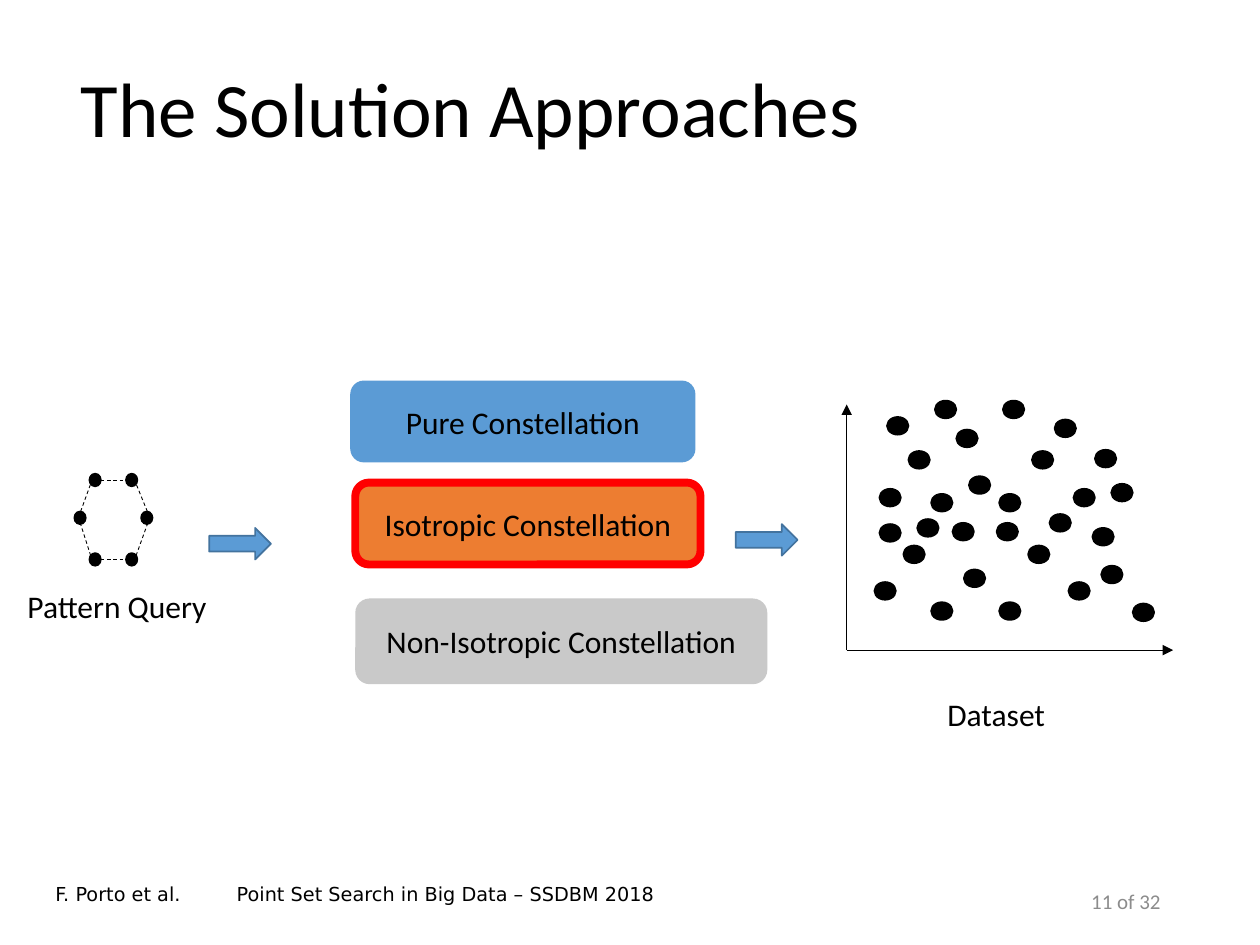
from lxml import etree
from pptx import Presentation
from pptx import util as u
from pptx.dml.color import RGBColor
from pptx.enum import dml, shapes, text
from pptx.oxml.ns import qn

COLORS = {
    "black": "000000",
    "gray text": "8C8C8C",
    "blue": "5B9BD5",
    "dark blue": "43739E",
    "orange": "ED7D31",
    "red": "FF0000",
    "silver": "C9C9C9",
}
DATASET_DOT = (0.17, 0.14)
PATTERN_DOT = (0.09, 0.1)
DATASET_POINTS = [
    (7.42, 3.18), (7.21, 3.58), (7.28, 4.12), (8.19, 3.58), (7.96, 3.18),
    (7.91, 4.15), (7.59, 3.41), (7.04, 3.31), (6.98, 3.88), (7.69, 3.78),
    (8.52, 3.88), (8.37, 3.33), (8.69, 3.57), (7.39, 3.92), (7.17, 4.33),
    (7.39, 4.78), (8.16, 4.33), (7.93, 3.92), (7.93, 4.78), (7.56, 4.15),
    (6.98, 4.16), (6.94, 4.62), (7.65, 4.52), (8.48, 4.62), (8.33, 4.08),
    (8.67, 4.19), (8.99, 4.79), (8.74, 4.49), (8.82, 3.84),
]
PATTERN_POINTS = [(0.71, 3.76), (0.59, 4.06), (0.71, 4.39),
                  (1.12, 4.06), (1, 3.76), (1, 4.39)]
PATTERN_EDGES = [
    (0.8, 4.44, 1, 4.44), (1.08, 4.41, 1.17, 4.16), (0.72, 4.41, 0.64, 4.16),
    (0.64, 4.06, 0.72, 3.84), (1.17, 4.06, 1.08, 3.84), (0.8, 3.81, 1, 3.81),
]
APPROACHES = [
    ("Pure Constellation", (2.78, 3.02, 2.74, 0.65), "blue", None),
    ("Isotropic Constellation", (2.82, 3.83, 2.74, 0.65), "orange", "red"),
    ("Non-Isotropic Constellation", (2.82, 4.75, 3.27, 0.68), "silver", None),
]


def inches(values):
    return [u.Inches(value) for value in values]


def rgb(name):
    return RGBColor.from_string(COLORS[name])


class SlideBuilder:
    font = "Calibri"
    footer_font = "DejaVu Sans"

    def __init__(self, slide):
        self.slide = slide

    def group(self):
        return self.slide.shapes.add_group_shape().shapes

    def set_text(self, shape, words, size, color="black", font=None, align=text.PP_ALIGN.LEFT):
        shape.text_frame.text = words
        paragraph = shape.text_frame.paragraphs[0]
        paragraph.alignment = align
        run_font = paragraph.runs[0].font
        run_font.size = u.Pt(size)
        run_font.name = font or self.font
        run_font.color.rgb = rgb(color)
        return paragraph

    def title(self, words, box):
        title = self.slide.shapes.title
        title.left, title.top, title.width, title.height = inches(box)
        title.text_frame.vertical_anchor = text.MSO_ANCHOR.MIDDLE
        self.set_text(title, words, 44).line_spacing = 0.9

    def label(self, words, box, size=18, wrap=True, anchor=text.MSO_ANCHOR.TOP, **style):
        label = self.slide.shapes.add_textbox(*inches(box))
        label.text_frame.word_wrap = wrap
        label.text_frame.vertical_anchor = anchor
        self.set_text(label, words, size, **style)

    def shape(self, kind, box, fill, line=None, width=1, parent=None):
        parent = self.slide.shapes if parent is None else parent
        shape = parent.add_shape(kind, *inches(box))
        shape.shadow.inherit = False
        shape.fill.solid()
        shape.fill.fore_color.rgb = rgb(fill)
        if line:
            shape.line.color.rgb = rgb(line)
            shape.line.width = u.Pt(width)
        else:
            shape.line.fill.background()
        return shape

    def dots(self, parent, points, size):
        for point in points:
            self.shape(shapes.MSO_SHAPE.OVAL, (*point, *size), "black", "black", parent=parent)

    def approach(self, words, box, fill, line):
        shape = self.shape(shapes.MSO_SHAPE.ROUNDED_RECTANGLE, box, fill, line, 4.5)
        shape.text_frame.vertical_anchor = text.MSO_ANCHOR.MIDDLE
        self.set_text(shape, words, 18, align=text.PP_ALIGN.CENTER)

    def block_arrow(self, left, top):
        self.shape(shapes.MSO_SHAPE.RIGHT_ARROW, (left, top, 0.49, 0.25), "blue", "dark blue")

    def line(self, parent, ends, dashed=False, arrow=False):
        connector = parent.add_connector(shapes.MSO_CONNECTOR.STRAIGHT, *inches(ends))
        connector.line.color.rgb = rgb("black")
        connector.line.width = u.Pt(0.5)
        if dashed:
            connector.line.dash_style = dml.MSO_LINE.DASH
        properties = connector._element.spPr
        if arrow:
            etree.SubElement(properties.find(qn("a:ln")), qn("a:tailEnd"), type="triangle")
        etree.SubElement(properties, qn("a:effectLst"))


def main():
    presentation = Presentation()
    presentation.slide_width, presentation.slide_height = inches((10, 7.5))
    title_only = presentation.slide_layouts[5]
    builder = SlideBuilder(presentation.slides.add_slide(title_only))

    builder.title("The Solution Approaches", (0.54, 0.17, 8.62, 1.45))

    dataset = builder.group()
    builder.dots(dataset, DATASET_POINTS, DATASET_DOT)
    for tip in [(6.72, 3.21), (9.31, 5.16)]:
        builder.line(dataset, (6.72, 5.16, *tip), arrow=True)
    builder.label("Dataset", (7.42, 5.47, 0.99, 0.4), wrap=False)

    pattern = builder.group()
    builder.dots(pattern, PATTERN_POINTS, PATTERN_DOT)
    for edge in PATTERN_EDGES:
        builder.line(pattern, edge, dashed=True)
    builder.label("Pattern Query", (0.12, 4.61, 1.64, 0.4), wrap=False)

    for approach in APPROACHES:
        builder.approach(*approach)
    builder.block_arrow(1.66, 4.19)
    builder.block_arrow(5.84, 4.16)

    builder.label("F. Porto et al.", (0.34, 6.95, 1.32, 0.4), 11, font=builder.footer_font)
    builder.label("Point Set Search in Big Data – SSDBM 2018", (1.78, 6.95, 6.45, 0.4), 11,
                  font=builder.footer_font)
    builder.label("11 of 32", (7.06, 6.95, 2.25, 0.4), 12, anchor=text.MSO_ANCHOR.MIDDLE,
                  color="gray text", align=text.PP_ALIGN.RIGHT)

    presentation.save("out.pptx")


if __name__ == "__main__":
    main()
